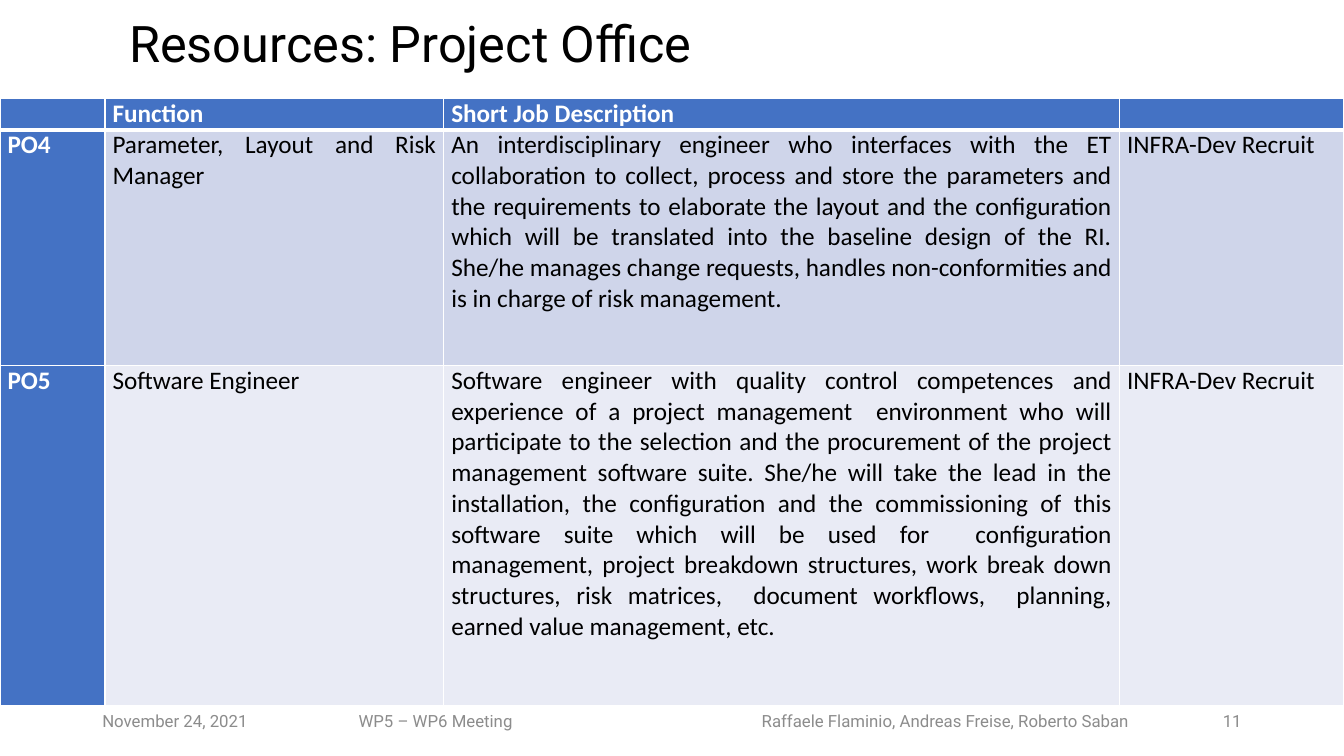
from lxml import etree
from pptx import Presentation
from pptx.dml.color import RGBColor
from pptx.enum.shapes import MSO_CONNECTOR
from pptx.enum.text import MSO_ANCHOR, PP_ALIGN
from pptx.oxml.ns import qn
from pptx.util import Pt

LEFT, RIGHT, JUSTIFY = PP_ALIGN.LEFT, PP_ALIGN.RIGHT, PP_ALIGN.JUSTIFY
MIDDLE = MSO_ANCHOR.MIDDLE
STRAIGHT = MSO_CONNECTOR.STRAIGHT
COLORS = {"black": "000000", "white": "FFFFFF", "gray": "8C8C8C", "rule": "A6A6A6",
          "blue": "4472C4", "band1": "CFD5EA", "band2": "E9EBF5"}

prs = Presentation()
prs.slide_width, prs.slide_height = Pt(960), Pt(540)
s = prs.slides.add_slide(prs.slide_layouts[6])


def add_run(p, text, size, font, color, bold=False):
    r = p.add_run()
    r.text = text
    r.font.size, r.font.name, r.font.bold = Pt(size), font, bold
    r.font.color.rgb = RGBColor.from_string(COLORS[color])


def add_text(x, y, w, h, text, size, color, align):
    tf = s.shapes.add_textbox(Pt(x), Pt(y), Pt(w), Pt(h)).text_frame
    tf.word_wrap = True
    tf.vertical_anchor = MIDDLE
    p = tf.paragraphs[0]
    p.alignment = align
    add_run(p, text, size, "Roboto", color)
    return tf


# Footer rule
FOOTER_Y, FOOTER_H = 500.4, 28.8
rule = s.shapes.add_connector(STRAIGHT, Pt(66), Pt(FOOTER_Y), Pt(894), Pt(FOOTER_Y))
rule.line.width = Pt(1.25)
rule.line.color.rgb = RGBColor.from_string(COLORS["rule"])
etree.SubElement(rule._element.spPr, qn("a:effectLst"))

# Title
add_text(85.2, 3.2, 657, 54, "Resources: Project Office", 36, "black", JUSTIFY)

# Footer
add_text(66, FOOTER_Y, 155.5, FOOTER_H, "November 24, 2021", 12, "gray", LEFT)
tf = add_text(232.5, FOOTER_Y, 598, FOOTER_H,
              "WP5 – WP6 Meeting\tRaffaele Flaminio, Andreas Freise, Roberto Saban",
              12, "gray", LEFT)
tf.margin_left = Pt(23.6)
tabs = etree.SubElement(tf.paragraphs[0]._p.get_or_add_pPr(), qn("a:tabLst"))
etree.SubElement(tabs, qn("a:tab"), pos=str(Pt(288)), algn="l")
add_text(843, FOOTER_Y, 51, FOOTER_H, "11", 12, "gray", RIGHT)

# Job table
jobs = [
    ["", "Function", "Short Job Description", ""],
    ["PO4", "Parameter, Layout and Risk Manager",
     "An interdisciplinary engineer who interfaces with the ET collaboration to collect, "
     "process and store the parameters and the requirements to elaborate the layout and the "
     "configuration which will be translated into the baseline design of the RI. She/he "
     "manages change requests, handles non-conformities and is in charge of risk management.",
     "INFRA-Dev Recruit"],
    ["PO5", "Software Engineer",
     "Software engineer with quality control competences and experience of a project "
     "management  environment who will participate to the selection and the procurement of "
     "the project management software suite. She/he will take the lead in the installation, "
     "the configuration and the commissioning of this software suite which will be used for  "
     "configuration management, project breakdown structures, work break down structures, "
     "risk matrices,  document workflows,  planning, earned value management, etc.",
     "INFRA-Dev Recruit"],
]
col_widths = [75, 242, 482.7, 160.3]
row_heights = [22, 168.3, 243.2]
row_fills = ["blue", "band1", "band2"]

table = s.shapes.add_table(len(jobs), len(col_widths), Pt(0), Pt(70.6),
                           Pt(sum(col_widths)), Pt(sum(row_heights))).table
for column, width in zip(table.columns, col_widths):
    column.width = Pt(width)
for row, height in zip(table.rows, row_heights):
    row.height = Pt(height)

for i, job in enumerate(jobs):
    for j, text in enumerate(job):
        cell = table.cell(i, j)
        heading = i == 0 or j == 0
        cell.margin_left = cell.margin_right = Pt(5.4)
        cell.margin_top = cell.margin_bottom = Pt(0)

        # White cell borders, thicker under the header row
        tcPr = cell._tc.get_or_add_tcPr()
        for side in ("L", "R", "T", "B"):
            under_header = (i, side) in ((0, "B"), (1, "T"))
            ln = etree.SubElement(tcPr, qn(f"a:ln{side}"), w=str(Pt(3 if under_header else 1)))
            fill = etree.SubElement(ln, qn("a:solidFill"))
            etree.SubElement(fill, qn("a:srgbClr"), val=COLORS["white"])

        cell.fill.solid()
        cell.fill.fore_color.rgb = RGBColor.from_string(
            COLORS["blue" if heading else row_fills[i]])
        if text:
            p = cell.text_frame.paragraphs[0]
            p.alignment = JUSTIFY
            add_run(p, text, 18, "Calibri", "white" if heading else "black", heading)

prs.save("out.pptx")
